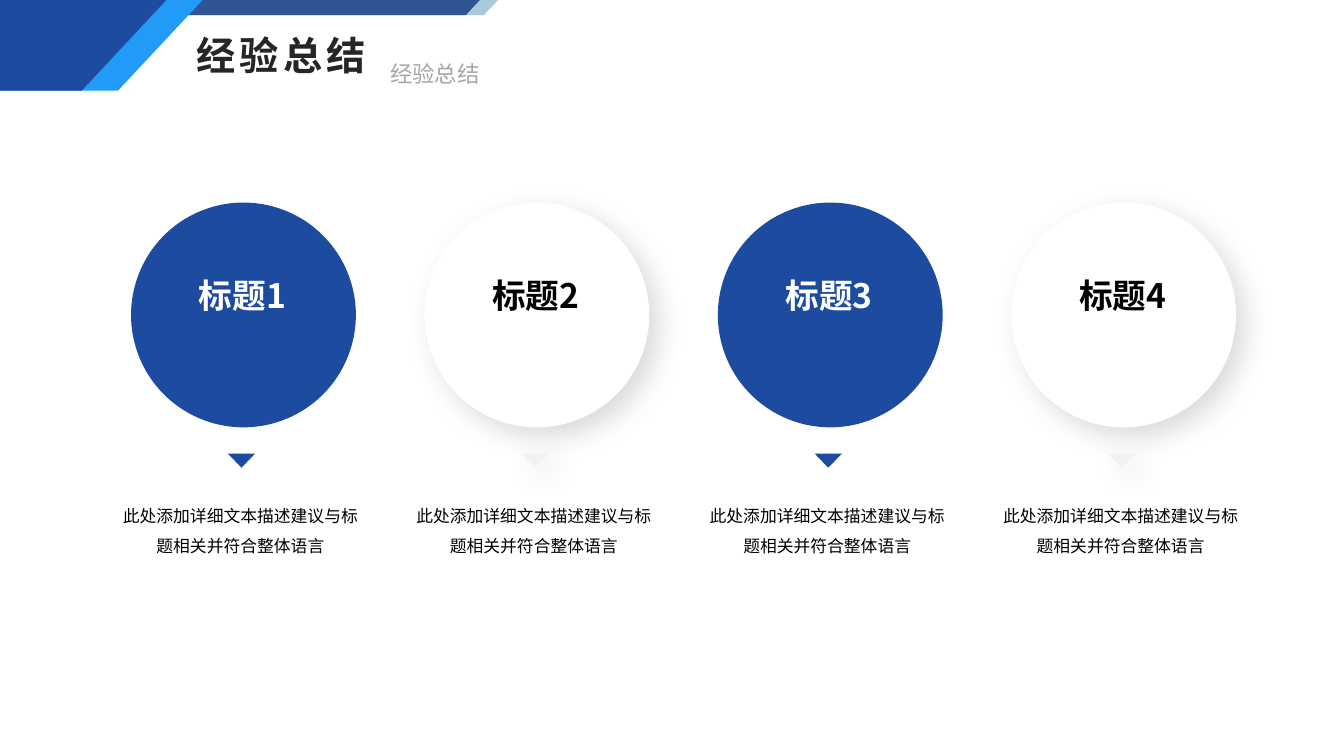
"""Build the experience summary slide with four titled circles."""
from dataclasses import dataclass

from lxml import etree
from pptx import Presentation
from pptx.dml.color import RGBColor
from pptx.enum.shapes import MSO_SHAPE
from pptx.enum.text import MSO_ANCHOR, MSO_AUTO_SIZE, PP_ALIGN
from pptx.oxml.ns import qn
from pptx.shapes.autoshape import Shape
from pptx.slide import Slide
from pptx.util import Inches, Pt

ELLIPSE = MSO_SHAPE.OVAL
TRIANGLE = MSO_SHAPE.ISOSCELES_TRIANGLE
PARALLELOGRAM = MSO_SHAPE.PARALLELOGRAM
LEFT, CENTER = PP_ALIGN.LEFT, PP_ALIGN.CENTER
TOP = MSO_ANCHOR.TOP
GROW = MSO_AUTO_SIZE.SHAPE_TO_FIT_TEXT

FONT = "Noto Sans CJK SC"
BLUE = RGBColor(0x1D, 0x4B, 0xA0)
BRIGHT = RGBColor(0x22, 0x9B, 0xF8)
BAND = RGBColor(0x2F, 0x55, 0x97)
TEAL = RGBColor(0x1A, 0x6D, 0x9F)
WHITE = RGBColor(0xFF, 0xFF, 0xFF)
PALE = RGBColor(0xF2, 0xF2, 0xF2)
BLACK = RGBColor(0x00, 0x00, 0x00)
DARK = RGBColor(0x26, 0x26, 0x26)
GRAY = RGBColor(0xA6, 0xA6, 0xA6)

HEADING = "经验总结"
DETAIL = "此处添加详细文本描述建议与标题相关并符合整体语言"
FIRST_LEFT, PITCH = 1.11, 2.91


@dataclass(frozen=True)
class Box:
    left: float
    top: float
    width: float
    height: float


@dataclass(frozen=True)
class TextStyle:
    size: int
    color: RGBColor
    bold: bool = False
    align: PP_ALIGN = LEFT
    spacing: float = 1.0
    tracking: int = 0
    wrap: bool = False
    inset: bool = True


@dataclass(frozen=True)
class Card:
    label: str
    circle: RGBColor
    pointer: RGBColor
    text: RGBColor
    shadow: bool


CARDS = [
    Card("标题1", BLUE, BLUE, WHITE, False),
    Card("标题2", WHITE, PALE, BLACK, True),
    Card("标题3", BLUE, BLUE, WHITE, False),
    Card("标题4", WHITE, PALE, BLACK, True),
]


def paint(sp: Shape, color: RGBColor) -> None:
    sp.shadow.inherit = False
    sp.fill.solid()
    sp.fill.fore_color.rgb = color
    sp.line.fill.background()


def add_alpha(color_el: etree._Element, percent: int) -> None:
    etree.SubElement(color_el, qn("a:alpha"), val=str(percent * 1000))


def add_shadow(sp: Shape) -> None:
    effects = sp._element.spPr.find(qn("a:effectLst"))
    outer = etree.SubElement(
        effects, qn("a:outerShdw"), blurRad=str(Pt(20)), dist=str(Pt(9)),
        dir=str(45 * 60000), algn="tl", rotWithShape="0")
    color = etree.SubElement(outer, qn("a:srgbClr"), val=str(BLACK))
    add_alpha(color, 15)


def add_preset(s: Slide, kind: MSO_SHAPE, box: Box, color: RGBColor) -> Shape:
    sp = s.shapes.add_shape(kind, Inches(box.left), Inches(box.top),
                            Inches(box.width), Inches(box.height))
    paint(sp, color)
    return sp


def add_corner(s: Slide, top_right: float, bottom_right: float, color: RGBColor) -> None:
    points = [(Inches(x), Inches(y))
              for x, y in ((top_right, 0), (bottom_right, 0.9), (0, 0.9))]
    builder = s.shapes.build_freeform(0, 0)
    builder.add_line_segments(points, close=True)
    paint(builder.convert_to_shape(), color)


def write(sp: Shape, text: str, style: TextStyle) -> None:
    tf = sp.text_frame
    tf.word_wrap = style.wrap
    tf.auto_size = GROW
    tf.vertical_anchor = TOP
    if not style.inset:
        tf.margin_left = tf.margin_right = tf.margin_top = tf.margin_bottom = 0
    p = tf.paragraphs[0]
    p.alignment = style.align
    p.line_spacing = style.spacing
    r = p.add_run()
    r.text = text
    r.font.name = FONT
    r.font.size = Pt(style.size)
    r.font.bold = style.bold
    r.font.color.rgb = style.color
    rpr = r.font._element
    etree.SubElement(rpr, qn("a:ea"), typeface=FONT)
    if style.tracking:
        rpr.set("spc", str(style.tracking * 100))


def add_text(s: Slide, box: Box, text: str, style: TextStyle) -> None:
    sp = s.shapes.add_textbox(Inches(box.left), Inches(box.top),
                              Inches(box.width), Inches(box.height))
    write(sp, text, style)


def add_header(s: Slide) -> None:
    for left, color in ((1.18, TEAL), (1, BAND)):
        band = add_preset(s, PARALLELOGRAM, Box(left, 0, 3.76, 0.15), color)
        band.adjustments[0] = 0.93
        if color == TEAL:
            add_alpha(band._element.spPr.find(qn("a:solidFill"))[0], 37)
    add_corner(s, 2.01, 1.17, BRIGHT)
    add_corner(s, 1.65, 0.81, BLUE)
    title = s.shapes.title
    title.left, title.top = Inches(1.85), Inches(0.26)
    title.width, title.height = Inches(1.92), Inches(0.57)
    write(title, HEADING, TextStyle(28, DARK, bold=True, tracking=3))
    add_text(s, Box(3.77, 0.55, 1.09, 0.37), HEADING, TextStyle(16, GRAY))


def add_card(s: Slide, card: Card, left: float) -> None:
    circle = add_preset(s, ELLIPSE, Box(left + 0.19, 2.01, 2.23, 2.23), card.circle)
    add_text(s, Box(left + 0.31, 2.73, 1.97, 0.4), card.label,
             TextStyle(24, card.text, bold=True, align=CENTER, wrap=True, inset=False))
    add_text(s, Box(left, 4.87, 2.55, 0.71), DETAIL,
             TextStyle(12, BLACK, align=CENTER, spacing=1.5, wrap=True))
    pointer = add_preset(s, TRIANGLE, Box(left + 1.15, 4.5, 0.27, 0.14), card.pointer)
    pointer.rotation = 180
    if card.shadow:
        add_shadow(circle)
        add_shadow(pointer)


def main() -> None:
    prs = Presentation()
    prs.slide_width, prs.slide_height = Inches(13.33), Inches(7.5)
    s = prs.slides.add_slide(prs.slide_layouts[5])
    add_header(s)
    for i, card in enumerate(CARDS):
        add_card(s, card, FIRST_LEFT + i * PITCH)
    prs.save("out.pptx")


if __name__ == "__main__":
    main()
